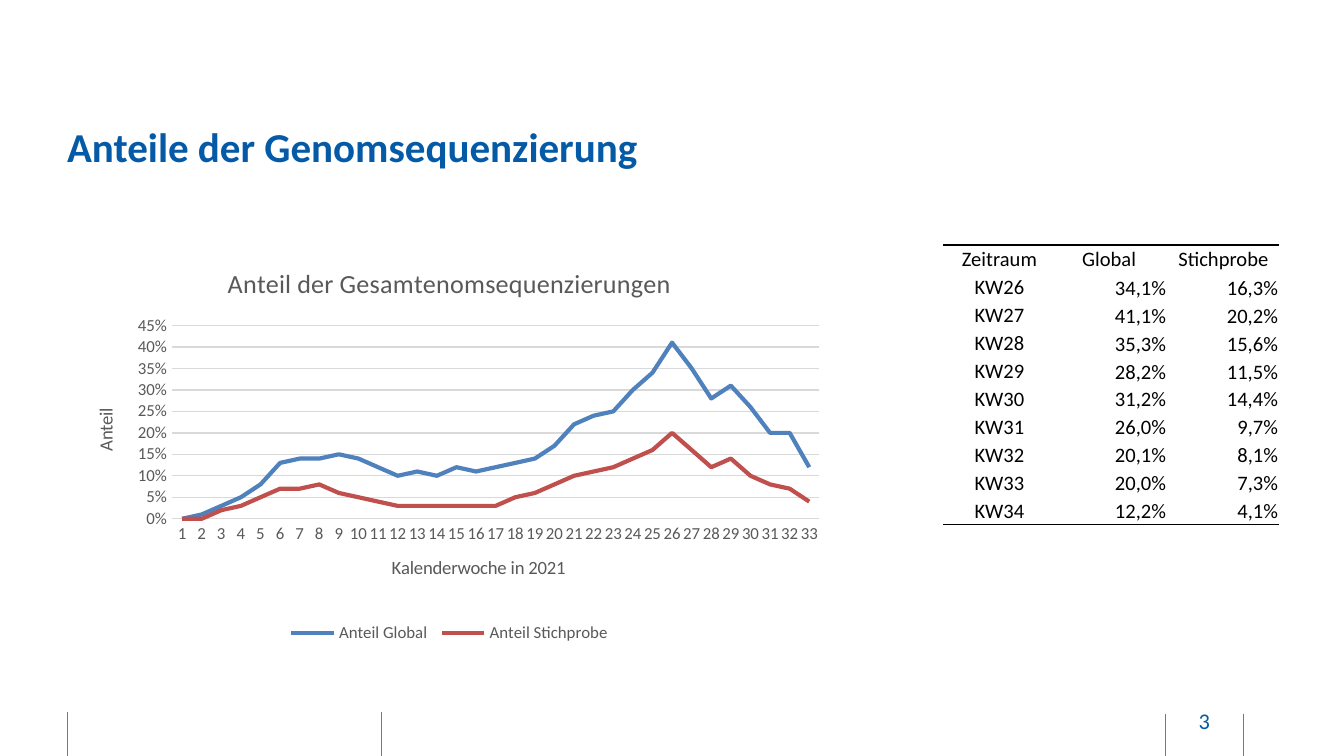
import pptx
import pptx.chart.data
import pptx.dml.color
import pptx.enum.chart
import pptx.enum.shapes
import pptx.enum.text
import pptx.oxml
import pptx.oxml.ns
import pptx.util

RGBColor = pptx.dml.color.RGBColor
NAVY = RGBColor(0x04, 0x5A, 0xA6)
BLUE = RGBColor(0x4F, 0x81, 0xBD)
RED = RGBColor(0xC0, 0x50, 0x4D)
BLACK = RGBColor(0, 0, 0)
GREY = RGBColor(0x59, 0x59, 0x59)
LIGHT = RGBColor(0xD9, 0xD9, 0xD9)

Align = pptx.enum.text.PP_ALIGN
Anchor = pptx.enum.text.MSO_ANCHOR
ChartType = pptx.enum.chart.XL_CHART_TYPE
Tick = pptx.enum.chart.XL_TICK_MARK
Legend = pptx.enum.chart.XL_LEGEND_POSITION
PLAIN_TABLE = "{2D5ABB26-0587-4C30-8999-92F81FD0307C}"

HEADER = ["Zeitraum", "Global ", "Stichprobe"]
GLOBAL_RECENT = [34.1, 41.1, 35.3, 28.2, 31.2, 26.0, 20.1, 20.0, 12.2]
SAMPLE_RECENT = [16.3, 20.2, 15.6, 11.5, 14.4, 9.7, 8.1, 7.3, 4.1]
GLOBAL_WEEKS = [0, 1, 3, 5, 8, 13, 14, 14, 15, 14, 12, 10, 11, 10, 12, 11, 12,
                13, 14, 17, 22, 24, 25, 30, 34, 41, 35, 28, 31, 26, 20, 20, 12]
SAMPLE_WEEKS = [0, 0, 2, 3, 5, 7, 7, 8, 6, 5, 4, 3, 3, 3, 3, 3, 3,
                5, 6, 8, 10, 11, 12, 14, 16, 20, 16, 12, 14, 10, 8, 7, 4]


def percent(value):
    return f"{value:.1f}%".replace(".", ",")


class SlideBuilder:
    COLUMNS = 100
    ROWS = 100
    FONT = "Calibri"

    def __init__(self):
        self.presentation = pptx.Presentation()
        self.presentation.slide_width = pptx.util.Inches(10)
        self.presentation.slide_height = self.presentation.slide_width * 9 // 16
        self.slide = self.presentation.slides.add_slide(
            self.presentation.slide_layouts[6])

    def x(self, columns):
        return round(self.presentation.slide_width * columns / self.COLUMNS)

    def y(self, rows):
        return round(self.presentation.slide_height * rows / self.ROWS)

    def box(self, left, top, width, height):
        return self.x(left), self.y(top), self.x(width), self.y(height)

    def apply(self, target, values):
        for name, value in values.items():
            setattr(target, name, value)

    def style(self, font, size, color, bold=False):
        self.apply(font, {"name": self.FONT, "size": pptx.util.Pt(size),
                          "bold": bold})
        font.color.rgb = color

    def stroke(self, line, color, width):
        line.color.rgb = color
        line.width = pptx.util.Pt(width)

    def text(self, place, wording, size, color, align, bold=False):
        frame = self.slide.shapes.add_textbox(*self.box(*place)).text_frame
        self.apply(frame, {"word_wrap": True, "vertical_anchor": Anchor.MIDDLE,
                           "margin_left": 0, "margin_right": 0,
                           "margin_top": 0, "margin_bottom": 0})
        paragraph = frame.paragraphs[0]
        self.apply(paragraph, {"text": wording, "alignment": align})
        self.style(paragraph.runs[0].font, size, color, bold)

    def rule(self, column, top):
        connector = self.slide.shapes.add_connector(
            pptx.enum.shapes.MSO_CONNECTOR.STRAIGHT,
            self.x(column), self.y(top), self.x(column), self.y(100))
        self.stroke(connector.line, BLUE, 0.5)
        connector._element.spPr.append(
            pptx.oxml.parse_xml(f"<a:effectLst {pptx.oxml.ns.nsdecls('a')}/>"))

    def border(self, cell, side):
        cell._tc.get_or_add_tcPr().insert(0, pptx.oxml.parse_xml(
            f"<a:ln{side} {pptx.oxml.ns.nsdecls('a')} w='12700'><a:solidFill>"
            f"<a:srgbClr val='{BLACK}'/></a:solidFill></a:ln{side}>"))

    def table(self, place, rows):
        table = self.slide.shapes.add_table(
            len(rows), len(rows[0]), *self.box(*place)).table
        self.apply(table, {"first_row": False, "horz_banding": False})
        table._tbl.tblPr.find(pptx.oxml.ns.qn("a:tableStyleId")).text = PLAIN_TABLE
        for i, row in enumerate(rows):
            for j, wording in enumerate(row):
                cell = table.cell(i, j)
                number = i > 0 and j > 0
                edge = pptx.util.Inches(0.01)
                self.apply(cell, {
                    "text": wording, "margin_left": edge, "margin_right": edge,
                    "margin_top": edge, "margin_bottom": 0,
                    "vertical_anchor": Anchor.BOTTOM if number else Anchor.MIDDLE})
                cell.fill.background()
                paragraph = cell.text_frame.paragraphs[0]
                paragraph.alignment = Align.RIGHT if number else Align.CENTER
                self.style(paragraph.runs[0].font, 11, BLACK)
                if i == 0:
                    self.border(cell, "T")
                if i == len(rows) - 1:
                    self.border(cell, "B")

    def caption(self, owner, wording, size):
        title = owner.chart_title if hasattr(owner, "chart_title") else owner.axis_title
        title.text_frame.text = wording
        self.style(title.text_frame.paragraphs[0].runs[0].font, size, GREY)

    def line_chart(self, place, title, axis_titles, categories, series, layout):
        data = pptx.chart.data.CategoryChartData(number_format="0%")
        data.categories = categories
        for name, values, color in series:
            data.add_series(name, [value / 100 for value in values])
        chart = self.slide.shapes.add_chart(
            ChartType.LINE, *self.box(*place), data).chart
        self.style(chart.font, 10, BLACK)
        self.caption(chart, title, 14)
        chart.has_legend = True
        self.apply(chart.legend, {"position": Legend.BOTTOM,
                                  "include_in_layout": False})
        self.style(chart.legend.font, 9, GREY)
        chart.plots[0].vary_by_categories = False
        for line, (name, values, color) in zip(chart.plots[0].series, series):
            line.smooth = False
            self.stroke(line.format.line, color, 2.25)
        axes = chart.category_axis, chart.value_axis
        for axis, wording in zip(axes, axis_titles):
            self.apply(axis, {"major_tick_mark": Tick.NONE,
                              "minor_tick_mark": Tick.NONE})
            self.style(axis.tick_labels.font, 9, GREY)
            self.caption(axis, wording, 10)
        self.stroke(axes[0].format.line, LIGHT, 0.75)
        self.apply(axes[1], {"minimum_scale": 0, "maximum_scale": 0.45,
                             "major_unit": 0.05, "has_major_gridlines": True})
        self.apply(axes[1].tick_labels, {"number_format": "0%",
                                         "number_format_is_linked": False})
        axes[1].format.line.fill.background()
        self.stroke(axes[1].major_gridlines.format.line, LIGHT, 0.75)
        self.plot_layout(chart, layout)

    def plot_layout(self, chart, layout):
        area = chart._chartSpace.chart.plotArea
        for old in area.findall(pptx.oxml.ns.qn("c:layout")):
            area.remove(old)
        parts = "".join(f"<c:{key} val='{value}'/>" for key, value in layout.items())
        area.insert(0, pptx.oxml.parse_xml(
            f"<c:layout {pptx.oxml.ns.nsdecls('c')}><c:manualLayout>"
            "<c:layoutTarget val='inner'/><c:xMode val='edge'/>"
            f"<c:yMode val='edge'/>{parts}</c:manualLayout></c:layout>"))


def main():
    builder = SlideBuilder()
    for column, top in [(86.7, 94.4), (28.4, 94.2), (5, 94.2), (92.5, 94.4)]:
        builder.rule(column, top)
    builder.text((86.9, 92.7, 5.4, 5.3), "3", 12, NAVY, Align.CENTER)
    builder.text((5, 12.4, 87.3, 13.9), "Anteile der Genomsequenzierung",
                 22, NAVY, Align.LEFT, bold=True)
    weeks = [[f"KW{26 + i}", percent(a), percent(b)]
             for i, (a, b) in enumerate(zip(GLOBAL_RECENT, SAMPLE_RECENT))]
    builder.table((70.2, 32.4, 25, 37), [HEADER] + weeks)
    builder.line_chart(
        (4.8, 32.4, 57.3, 53.3), "Anteil der Gesamtenomsequenzierungen",
        ("Kalenderwoche in 2021", "Anteil"),
        [str(week) for week in range(1, 34)],
        [("Anteil Global ", GLOBAL_WEEKS, BLUE),
         ("Anteil Stichprobe", SAMPLE_WEEKS, RED)],
        {"x": 0.14, "y": 0.2, "w": 0.84, "h": 0.48})
    builder.presentation.save("out.pptx")


if __name__ == "__main__":
    main()
